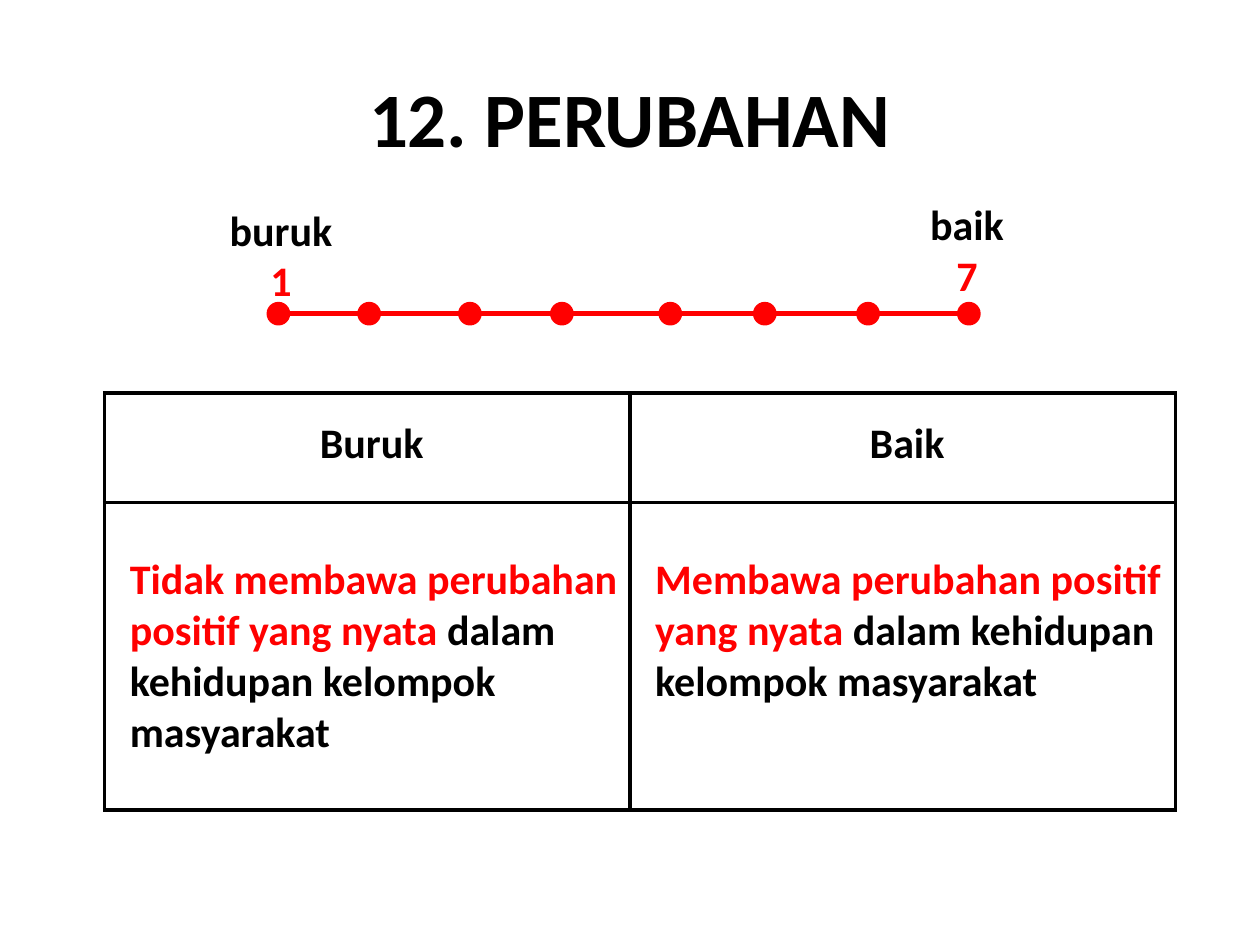
import pptx
import pptx.util
import pptx.dml.color
import pptx.enum.shapes
import pptx.enum.text
import pptx.oxml.ns
import lxml.etree

Inches = pptx.util.Inches
Pt = pptx.util.Pt
CENTER = pptx.enum.text.PP_ALIGN.CENTER
BLACK, RED, WHITE = "000000", "FF0000", "FFFFFF"


def color(hex_code):
    return pptx.dml.color.RGBColor.from_string(hex_code)


def style(paragraph, size=24, hex_code=BLACK, align=None):
    font = paragraph.font
    font.name, font.size, font.bold = "Calibri", Pt(size), True
    font.color.rgb = color(hex_code)
    paragraph.alignment = align


def add_title(slide, text, left, top, width, height):
    frame = slide.shapes.add_textbox(*map(Inches, (left, top, width, height))).text_frame
    frame.word_wrap = True
    frame.vertical_anchor = pptx.enum.text.MSO_ANCHOR.MIDDLE
    frame.text = text
    style(frame.paragraphs[0], 44, align=CENTER)


def add_scale_end(slide, word, score, left, top, width, height):
    frame = slide.shapes.add_textbox(*map(Inches, (left, top, width, height))).text_frame
    frame.word_wrap = False
    frame.text = f"{word}\n{score}"
    for paragraph, hex_code in zip(frame.paragraphs, (BLACK, RED)):
        style(paragraph, hex_code=hex_code, align=CENTER)


def add_scale(slide, left, top, width, dot_size, dot_offsets):
    # Axis through the middle of the dots
    middle = Inches(top + dot_size / 2)
    axis = slide.shapes.add_connector(
        pptx.enum.shapes.MSO_CONNECTOR.STRAIGHT,
        Inches(left + dot_size / 2), middle, Inches(left + width - dot_size / 2), middle)
    axis.line.color.rgb = color(RED)
    axis.line.width = Pt(3)
    lxml.etree.SubElement(axis.element.spPr, pptx.oxml.ns.qn("a:effectLst"))

    # Dots, spaced unevenly by hand
    for offset in dot_offsets:
        dot = slide.shapes.add_shape(
            pptx.enum.shapes.MSO_SHAPE.FLOWCHART_CONNECTOR,
            Inches(left + offset), Inches(top), Inches(dot_size), Inches(dot_size))
        dot.shadow.inherit = False
        dot.fill.solid()
        dot.fill.fore_color.rgb = color(RED)
        dot.line.color.rgb = color(RED)
        dot.line.width = Pt(2)


def format_cell(cell, left=0.07, top=0):
    cell.margin_left, cell.margin_top = Inches(left), Inches(top)
    cell.margin_right = cell.margin_bottom = 0
    properties = cell._tc.get_or_add_tcPr()
    for side in ("lnL", "lnR", "lnT", "lnB"):
        border = lxml.etree.SubElement(
            properties, pptx.oxml.ns.qn(f"a:{side}"), w=str(Pt(2.25)))
        fill = lxml.etree.SubElement(border, pptx.oxml.ns.qn("a:solidFill"))
        lxml.etree.SubElement(fill, pptx.oxml.ns.qn("a:srgbClr"), val=BLACK)
    cell.fill.solid()
    cell.fill.fore_color.rgb = color(WHITE)


def add_criteria(slide, criteria, left, top, column_widths, row_heights):
    table = slide.shapes.add_table(
        2, len(criteria), Inches(left), Inches(top),
        Inches(sum(column_widths)), Inches(sum(row_heights))).table
    table.first_row = table.horz_banding = False
    for row, height in zip(table.rows, row_heights):
        row.height = Inches(height)

    for index, (heading, emphasis, remainder) in enumerate(criteria):
        table.columns[index].width = Inches(column_widths[index])

        # Heading
        header = table.cell(0, index)
        format_cell(header)
        header.text = heading
        paragraph = header.text_frame.paragraphs[0]
        style(paragraph, align=CENTER)
        paragraph.line_spacing = 1.5

        # Description, opening in red
        description = table.cell(1, index)
        format_cell(description, left=0.2, top=0.41)
        paragraph = description.text_frame.paragraphs[0]
        style(paragraph)
        for text, hex_code in ((emphasis, RED), (remainder, BLACK)):
            run = paragraph.add_run()
            run.text = text
            run.font.color.rgb = color(hex_code)


def main():
    deck = pptx.Presentation()
    deck.slide_width, deck.slide_height = Inches(10), Inches(7.5)
    slide = deck.slides.add_slide(deck.slide_layouts[6])

    add_title(slide, "12. PERUBAHAN", 0.5, 0.3, 9, 1.25)

    remainder = "dalam kehidupan kelompok masyarakat"
    add_criteria(
        slide,
        [("Buruk", "Tidak membawa perubahan positif yang nyata ", remainder),
         ("Baik", "Membawa perubahan positif yang nyata ", remainder)],
        0.83, 3.12, column_widths=(4.17, 4.33), row_heights=(0.87, 2.44))

    add_scale(slide, 2.13, 2.41, 5.64, 0.16,
              (0, 0.72, 1.52, 2.25, 3.11, 3.86, 4.68, 5.48))
    add_scale_end(slide, "buruk", 1, 1.72, 1.57, 1.02, 0.91)
    add_scale_end(slide, "baik", 7, 7.28, 1.53, 0.79, 0.91)

    deck.save("out.pptx")


if __name__ == "__main__":
    main()
